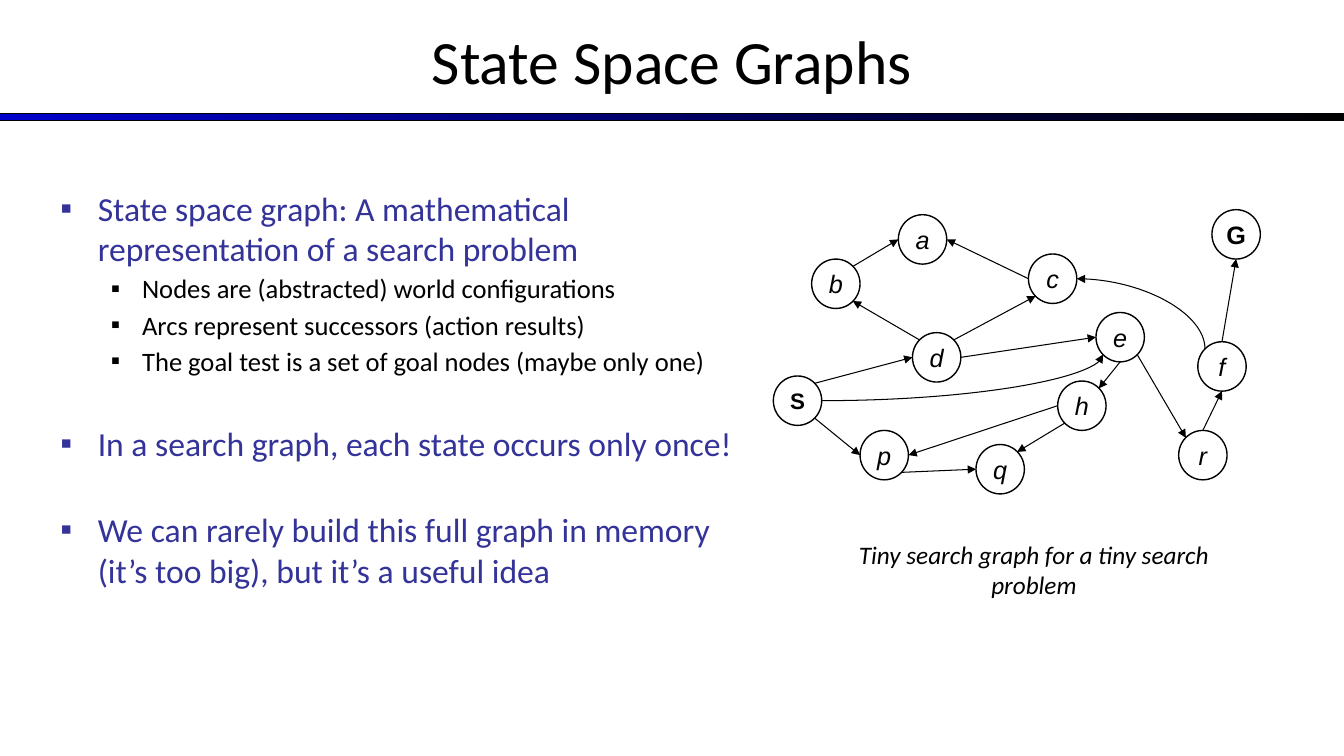
from lxml import etree
from pptx import Presentation
from pptx import util as u
from pptx.dml.color import RGBColor
from pptx.enum import shapes, text
from pptx.oxml.ns import qn

COLORS = {"ink": "000000", "accent": "333399", "bar": "0000CC"}
NODE_W, NODE_H = 0.48, 0.49
DIAGONAL = 0.15  # share of a node's box outside its circle at 45 degrees

# Connection sites of a circle: index, share of width, share of height
SITES = {
    "top": (0, 0.5, 0),
    "top left": (1, DIAGONAL, DIAGONAL),
    "left": (2, 0, 0.5),
    "bottom left": (3, DIAGONAL, 1 - DIAGONAL),
    "bottom": (4, 0.5, 1),
    "bottom right": (5, 1 - DIAGONAL, 1 - DIAGONAL),
    "right": (6, 1, 0.5),
    "top right": (7, 1 - DIAGONAL, DIAGONAL),
}

# Left and top of each node inside the graph's box
NODES = {
    "S": (0, 1.65), "G": (4.35, 0), "d": (1.38, 1.22), "b": (0.38, 0.49),
    "p": (0.86, 2.19), "q": (2.01, 2.33), "c": (2.53, 0.44), "e": (3.2, 1.02),
    "h": (2.82, 1.7), "a": (1.24, 0.05), "f": (4.21, 1.31), "r": (4.02, 2.19),
}

STRAIGHT_EDGES = [
    ("S", "bottom right", "p", "left"),
    ("p", "bottom right", "q", "left"),
    ("h", "bottom left", "q", "top right"),
    ("h", "left", "p", "right"),
    ("e", "bottom", "h", "top right"),
    ("e", "bottom right", "r", "top left"),
    ("r", "top", "f", "bottom"),
    ("f", "top", "G", "bottom"),
    ("S", "top right", "d", "left"),
    ("d", "top left", "b", "bottom right"),
    ("b", "top right", "a", "left"),
    ("c", "left", "a", "right"),
    ("d", "top right", "c", "bottom left"),
    ("d", "right", "e", "left"),
]

# Level, space before in points, wording
BULLETS = [
    (0, 2, "State space graph: A mathematical representation of a search problem"),
    (1, 3, "Nodes are (abstracted) world configurations"),
    (1, 3, "Arcs represent successors (action results)"),
    (1, 3, "The goal test is a set of goal nodes (maybe only one)"),
    (0, 33, "In a search graph, each state occurs only once!"),
    (0, 33, "We can rarely build this full graph in memory (it’s too big), but it’s a useful idea"),
]
# Size, colour, left margin and hanging indent of each level
LEVELS = [(24, "accent", 0.37, 0.37), (19, "ink", 0.81, 0.31)]


def color(name):
    return RGBColor.from_string(COLORS[name])


def place(shape, box):
    shape.left, shape.top, shape.width, shape.height = (u.Inches(v) for v in box)


def add_span(para, wording, size, font="Calibri", ink="ink", bold=False, italic=False):
    span = para.add_run()
    span.text = wording
    span.font.name, span.font.size = font, u.Pt(size)
    span.font.bold, span.font.italic = bold, italic
    span.font.color.rgb = color(ink)


def add_title(page, box):
    title = page.shapes.title
    place(title, box)
    frame = title.text_frame
    frame.vertical_anchor = text.MSO_ANCHOR.MIDDLE
    frame.auto_size = text.MSO_AUTO_SIZE.NONE
    frame.paragraphs[0].alignment = text.PP_ALIGN.CENTER
    add_span(frame.paragraphs[0], "State Space Graphs", 44)


def add_bar(page, box):
    bar = page.shapes.add_shape(
        shapes.MSO_SHAPE.RECTANGLE, *(u.Inches(v) for v in box))
    bar.shadow.inherit = False
    bar.fill.gradient()
    bar.fill.gradient_angle = 0
    for stop, name in zip(bar.fill.gradient_stops, ("bar", "ink")):
        stop.color.rgb = color(name)
    bar.line.color.rgb = color("ink")
    bar.line.width = u.Pt(0.75)


def add_bullets(page, box):
    body = page.placeholders[1]
    place(body, box)
    frame = body.text_frame
    frame.auto_size = text.MSO_AUTO_SIZE.NONE
    for number, (level, space, wording) in enumerate(BULLETS):
        para = frame.add_paragraph() if number else frame.paragraphs[0]
        size, ink, margin, hanging = LEVELS[level]
        para.level = level
        para.space_before = u.Pt(space)
        props = para._p.get_or_add_pPr()
        props.set("marL", str(u.Inches(margin)))
        props.set("indent", str(-u.Inches(hanging)))
        etree.SubElement(props, qn("a:buFont"), typeface="Arial")
        etree.SubElement(props, qn("a:buChar"), char="▪")
        add_span(para, wording, size, ink=ink)


def add_node(page, name, left, top):
    node = page.shapes.add_shape(
        shapes.MSO_SHAPE.FLOWCHART_CONNECTOR,
        *(u.Inches(v) for v in (left, top, NODE_W, NODE_H)))
    node.shadow.inherit = False
    node.fill.background()
    node.line.color.rgb = color("ink")
    node.line.width = u.Pt(1)
    frame = node.text_frame
    frame.word_wrap = False
    frame.vertical_anchor = text.MSO_ANCHOR.MIDDLE
    frame.paragraphs[0].alignment = text.PP_ALIGN.CENTER
    is_end = name in "SG"
    add_span(frame.paragraphs[0], name, 16 if name == "S" else 18, "Arial",
             bold=is_end, italic=not is_end)
    return node


def site_point(node, site):
    _, across, down = SITES[site]
    return node.left + int(node.width * across), node.top + int(node.height * down)


def add_arrow(page, kind, begin, end):
    arrow = page.shapes.add_connector(kind, *begin, *end)
    arrow.line.color.rgb = color("ink")
    arrow.line.width = u.Pt(0.75)
    etree.SubElement(arrow.line._get_or_add_ln(), qn("a:tailEnd"),
                     type="triangle", w="med", len="med")
    etree.SubElement(arrow._element.spPr, qn("a:effectLst"))
    return arrow


def add_straight_edge(page, source, source_site, target, target_site):
    arrow = add_arrow(page, shapes.MSO_CONNECTOR.STRAIGHT,
                      site_point(source, source_site), site_point(target, target_site))
    ends = arrow._element.nvCxnSpPr.cNvCxnSpPr
    for joint, node, site in ((ends.get_or_add_stCxn(), source, source_site),
                              (ends.get_or_add_endCxn(), target, target_site)):
        joint.id, joint.idx = node.shape_id, SITES[site][0]


def add_curved_edge(page, begin, end, upright=False):
    """Draw a quarter bend; an upright one leaves its begin point vertically."""
    if upright:
        middle_x, middle_y = (begin[0] + end[0]) // 2, (begin[1] + end[1]) // 2
        half_w, half_h = abs(begin[1] - end[1]) // 2, abs(begin[0] - end[0]) // 2
        begin = middle_x + half_w, middle_y - half_h
        end = middle_x - half_w, middle_y + half_h
    arrow = add_arrow(page, shapes.MSO_CONNECTOR.CURVE, begin, end)
    props = arrow._element.spPr
    props.find(qn("a:prstGeom")).set("prst", "curvedConnector2")
    if upright:
        props.find(qn("a:xfrm")).set("rot", str(90 * 60000))


def add_graph(page, left, top):
    nodes = {name: add_node(page, name, left + x, top + y)
             for name, (x, y) in NODES.items()}
    for source, source_site, target, target_site in STRAIGHT_EDGES:
        add_straight_edge(page, nodes[source], source_site, nodes[target], target_site)
    add_curved_edge(page, site_point(nodes["f"], "top left"),
                    site_point(nodes["c"], "right"), upright=True)
    add_curved_edge(page, site_point(nodes["S"], "right"),
                    site_point(nodes["e"], "bottom left"))


def add_caption(page, box):
    caption = page.shapes.add_textbox(*(u.Inches(v) for v in box))
    frame = caption.text_frame
    frame.word_wrap = True
    frame.paragraphs[0].alignment = text.PP_ALIGN.CENTER
    add_span(frame.paragraphs[0], "Tiny search graph for a tiny search problem", 18,
             italic=True)


def main():
    deck = Presentation()
    deck.slide_width, deck.slide_height = u.Inches(13.33), u.Inches(7.5)
    page = deck.slides.add_slide(deck.slide_layouts[1])
    add_bar(page, (0, 1.13, 13.33, 0.07))
    add_title(page, (0, -0.03, 13.33, 1.25))
    add_bullets(page, (0.5, 1.81, 6.92, 4.95))
    add_graph(page, 7.67, 2.08)
    add_caption(page, (8.42, 5.3, 3.67, 0.71))
    deck.save("out.pptx")


if __name__ == "__main__":
    main()
